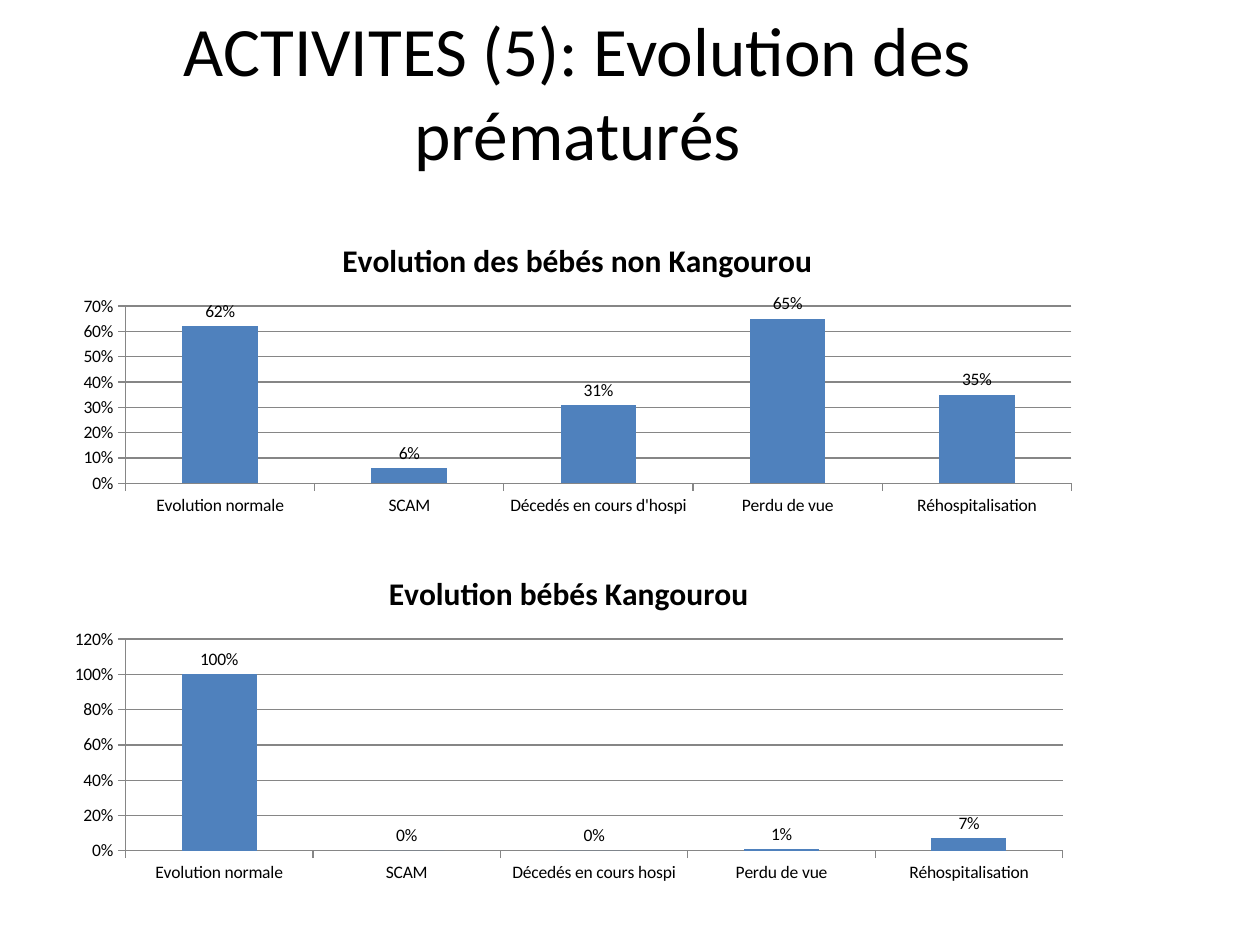
from dataclasses import dataclass

from pptx import Presentation
from pptx.chart.data import CategoryChartData
from pptx.dml.color import RGBColor
from pptx.enum.chart import XL_CHART_TYPE, XL_LABEL_POSITION, XL_TICK_MARK
from pptx.enum.text import MSO_ANCHOR, MSO_AUTO_SIZE, PP_ALIGN
from pptx.slide import Slide
from pptx.text.text import Font
from pptx.util import Pt


@dataclass(frozen=True)
class Theme:
    font: str = "Calibri"
    text: RGBColor = RGBColor(0x00, 0x00, 0x00)
    bar: RGBColor = RGBColor(0x4F, 0x81, 0xBD)
    line: RGBColor = RGBColor(0x86, 0x86, 0x86)
    title_size: float = 39.6
    chart_title_size: float = 18
    chart_text_size: float = 10


@dataclass(frozen=True)
class Box:
    """Position and size in points."""
    left: float
    top: float
    width: float
    height: float

    def lengths(self) -> tuple[Pt, Pt, Pt, Pt]:
        return Pt(self.left), Pt(self.top), Pt(self.width), Pt(self.height)


@dataclass(frozen=True)
class OutcomeChart:
    title: str
    box: Box
    shares: dict[str, float]
    maximum: float
    step: float


THEME = Theme()
TITLE = "ACTIVITES (5): Evolution des prématurés"
TITLE_BOX = Box(36, 9.4, 588, 85)
CHARTS = (
    OutcomeChart(
        "Evolution des bébés non Kangourou",
        Box(36, 126, 588, 172),
        {
            "Evolution normale": 0.62,
            "SCAM": 0.06,
            "Décedés en cours d'hospi": 0.31,
            "Perdu de vue": 0.65,
            "Réhospitalisation": 0.35,
        },
        maximum=0.7,
        step=0.1,
    ),
    OutcomeChart(
        "Evolution bébés Kangourou",
        Box(31, 315.4, 588, 193),
        {
            "Evolution normale": 1,
            "SCAM": 0,
            "Décedés en cours hospi": 0,
            "Perdu de vue": 0.01,
            "Réhospitalisation": 0.07,
        },
        maximum=1.2,
        step=0.2,
    ),
)


def format_font(font: Font, size: float, bold: bool = False) -> None:
    values = {"name": THEME.font, "size": Pt(size), "bold": bold}
    for name, value in values.items():
        setattr(font, name, value)
    font.color.rgb = THEME.text


def add_title(slide: Slide) -> None:
    title = slide.shapes.title
    title.left, title.top, title.width, title.height = TITLE_BOX.lengths()
    frame = title.text_frame
    frame.text = TITLE
    values = {
        "word_wrap": True,
        "auto_size": MSO_AUTO_SIZE.NONE,
        "vertical_anchor": MSO_ANCHOR.MIDDLE,
    }
    for name, value in values.items():
        setattr(frame, name, value)
    paragraph = frame.paragraphs[0]
    paragraph.alignment = PP_ALIGN.CENTER
    format_font(paragraph.runs[0].font, THEME.title_size)


def add_outcome_chart(slide: Slide, outcome: OutcomeChart) -> None:
    data = CategoryChartData(number_format="0%")
    data.categories = list(outcome.shares)
    data.add_series("Series 1", list(outcome.shares.values()))
    chart = slide.shapes.add_chart(
        XL_CHART_TYPE.COLUMN_CLUSTERED, *outcome.box.lengths(), data
    ).chart
    chart.has_legend = False
    format_font(chart.font, THEME.chart_text_size)

    chart.has_title = True
    chart.chart_title.include_in_layout = False
    title_frame = chart.chart_title.text_frame
    title_frame.text = outcome.title
    format_font(title_frame.paragraphs[0].runs[0].font, THEME.chart_title_size, bold=True)

    value_axis = chart.value_axis
    values = {
        "minimum_scale": 0,
        "maximum_scale": outcome.maximum,
        "major_unit": outcome.step,
        "has_major_gridlines": True,
    }
    for name, value in values.items():
        setattr(value_axis, name, value)
    value_axis.tick_labels.number_format = "0%"
    value_axis.tick_labels.number_format_is_linked = False
    for axis in (chart.category_axis, value_axis):
        axis.major_tick_mark = XL_TICK_MARK.OUTSIDE
        axis.format.line.color.rgb = THEME.line
        axis.format.line.width = Pt(0.75)
    gridline = value_axis.major_gridlines.format.line
    gridline.color.rgb = THEME.line
    gridline.width = Pt(0.75)

    plot = chart.plots[0]
    plot.gap_width = 150
    plot.vary_by_categories = False
    fill = plot.series[0].format.fill
    fill.solid()
    fill.fore_color.rgb = THEME.bar
    labels = plot.series[0].data_labels
    values = {
        "show_value": True,
        "number_format": "0%",
        "number_format_is_linked": False,
        "position": XL_LABEL_POSITION.OUTSIDE_END,
    }
    for name, value in values.items():
        setattr(labels, name, value)
    format_font(labels.font, THEME.chart_text_size)


def main() -> None:
    presentation = Presentation()
    presentation.slide_width, presentation.slide_height = Pt(720), Pt(540)
    title_only = presentation.slide_layouts[5]
    slide = presentation.slides.add_slide(title_only)
    add_title(slide)
    for outcome in CHARTS:
        add_outcome_chart(slide, outcome)
    presentation.save("out.pptx")


if __name__ == "__main__":
    main()
